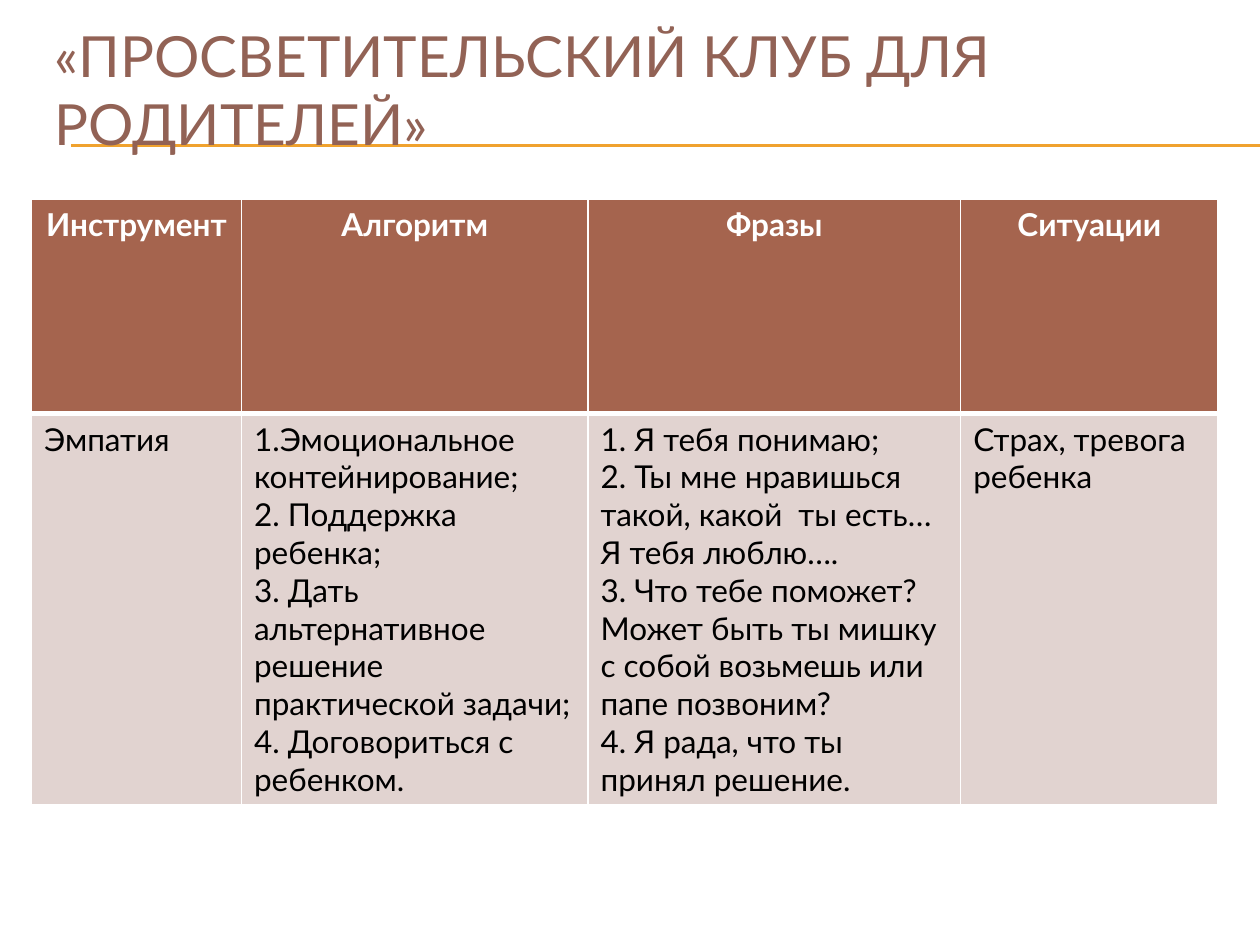
from dataclasses import dataclass

from lxml.etree import SubElement
from pptx import Presentation
from pptx.dml.color import RGBColor
from pptx.enum.shapes import MSO_CONNECTOR as Connector
from pptx.enum.text import MSO_ANCHOR as Anchor, MSO_AUTO_SIZE as AutoSize, PP_ALIGN as Align
from pptx.oxml.ns import qn
from pptx.util import Pt

FONT = "Lato"
COLORS = {
    "rule": "F0A22E",
    "title": "926255",
    "header": "A5644E",
    "body": "E1D3D0",
    "white": "FFFFFF",
    "black": "000000",
}
SLIDE_WIDTH, SLIDE_HEIGHT = 720, 540


@dataclass(frozen=True)
class Column:
    heading: str
    width: float
    lines: tuple[str, ...]


@dataclass(frozen=True)
class CellStyle:
    fill: str
    text: str
    bold: bool
    align: Align
    bottom_border: float


HEADER = CellStyle("header", "white", True, Align.CENTER, 3)
BODY = CellStyle("body", "black", False, Align.LEFT, 1)
ROW_HEIGHTS = (122.4, 223.2)

COLUMNS = (
    Column("Инструмент", 120, ("Эмпатия",)),
    Column("Алгоритм", 198, (
        "1.Эмоциональное контейнирование;",
        "2. Поддержка ребенка;",
        "3. Дать альтернативное решение практической задачи;",
        "4. Договориться с ребенком.",
    )),
    Column("Фразы", 213, (
        "1. Я тебя понимаю;",
        "2. Ты мне нравишься такой, какой  ты есть… Я тебя люблю….",
        "3. Что тебе поможет? Может быть ты мишку с собой возьмешь или папе позвоним?",
        "4. Я рада, что ты принял решение.",
    )),
    Column("Ситуации", 147, ("Страх, тревога ребенка",)),
)


def rgb(name: str) -> RGBColor:
    return RGBColor.from_string(COLORS[name])


def format_text(frame, size: float, color: str, bold: bool, align: Align) -> None:
    for paragraph in frame.paragraphs:
        paragraph.alignment = align
        for run in paragraph.runs:
            run.font.name = FONT
            run.font.size = Pt(size)
            run.font.bold = bold
            run.font.color.rgb = rgb(color)


def add_rule(slide, y: float) -> None:
    rule = slide.shapes.add_connector(
        Connector.STRAIGHT, Pt(40.5), Pt(y), Pt(SLIDE_WIDTH), Pt(y))
    rule.line.color.rgb = rgb("rule")
    rule.line.width = Pt(0.75)
    SubElement(rule._element.spPr, qn("a:effectLst"))


def add_border(cell, side: str, width: float) -> None:
    border = SubElement(cell._tc.get_or_add_tcPr(), qn(f"a:ln{side}"), w=str(Pt(width)))
    fill = SubElement(border, qn("a:solidFill"))
    SubElement(fill, qn("a:srgbClr"), val=COLORS["white"])


def fill_cell(cell, text: str, style: CellStyle) -> None:
    cell.text_frame.text = text
    format_text(cell.text_frame, 18, style.text, style.bold, style.align)
    # Borders come before the fill in the cell properties
    for side in "LRT":
        # The edge between the rows is shared, so both sides get one width
        shared_top = side == "T" and style is BODY
        add_border(cell, side, HEADER.bottom_border if shared_top else 1)
    add_border(cell, "B", style.bottom_border)
    cell.fill.solid()
    cell.fill.fore_color.rgb = rgb(style.fill)


def add_tools_table(slide) -> None:
    total_width = sum(column.width for column in COLUMNS)
    table = slide.shapes.add_table(
        len(ROW_HEIGHTS), len(COLUMNS),
        Pt(18), Pt(114), Pt(total_width), Pt(sum(ROW_HEIGHTS))).table
    for row, height in zip(table.rows, ROW_HEIGHTS):
        row.height = Pt(height)
    for index, column in enumerate(COLUMNS):
        table.columns[index].width = Pt(column.width)
        fill_cell(table.cell(0, index), column.heading, HEADER)
        fill_cell(table.cell(1, index), "\n".join(column.lines), BODY)


def add_title(slide) -> None:
    title = slide.shapes.title
    title.left, title.top, title.width, title.height = Pt(24), Pt(18), Pt(684), Pt(66)
    frame = title.text_frame
    frame.text = "«ПРОСВЕТИТЕЛЬСКИЙ КЛУБ ДЛЯ РОДИТЕЛЕЙ»"
    frame.word_wrap = True
    frame.auto_size = AutoSize.NONE
    frame.vertical_anchor = Anchor.MIDDLE
    format_text(frame, 32.4, "title", False, Align.LEFT)


def main() -> None:
    deck = Presentation()
    deck.slide_width, deck.slide_height = Pt(SLIDE_WIDTH), Pt(SLIDE_HEIGHT)
    slide = deck.slides.add_slide(deck.slide_layouts[5])

    # Double rule behind the title
    for y in (82.8, 83.5):
        add_rule(slide, y)
    # The title stands in front of the rules
    title_element = slide.shapes.title._element
    title_element.getparent().append(title_element)
    add_title(slide)

    # Table of tools
    add_tools_table(slide)
    deck.save("out.pptx")


if __name__ == "__main__":
    main()
